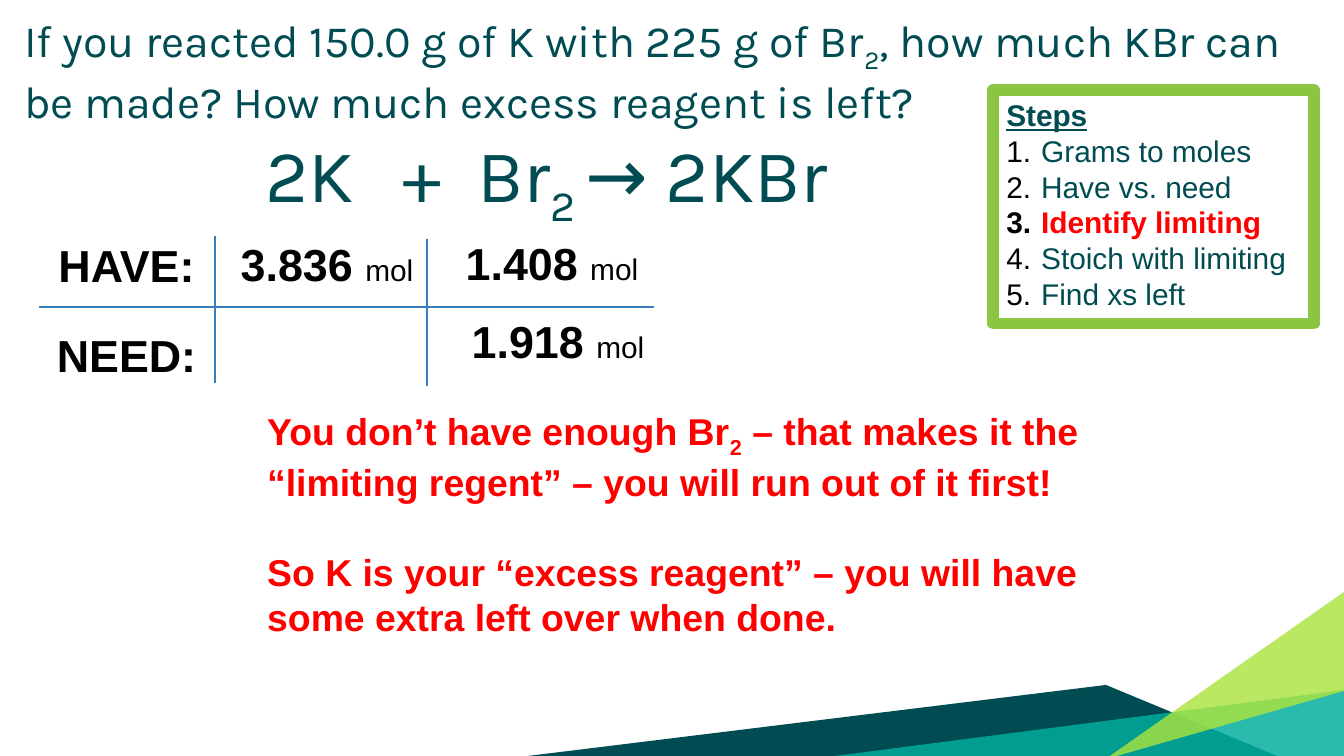
from dataclasses import dataclass

from pptx import Presentation
from pptx.dml.color import RGBColor
from pptx.enum.shapes import MSO_CONNECTOR, MSO_SHAPE
from pptx.enum.text import MSO_ANCHOR, MSO_AUTO_SIZE, PP_ALIGN
from pptx.oxml.ns import qn
from pptx.util import Pt
from lxml import etree

LEFT, CENTER = PP_ALIGN.LEFT, PP_ALIGN.CENTER
TOP, MIDDLE = MSO_ANCHOR.TOP, MSO_ANCHOR.MIDDLE
STRAIGHT, RECTANGLE = MSO_CONNECTOR.STRAIGHT, MSO_SHAPE.RECTANGLE
NO_AUTOFIT = MSO_AUTO_SIZE.NONE

DARK_TEAL = RGBColor(0x00, 0x4C, 0x52)
TEAL = RGBColor(0x00, 0xAE, 0x9D)
LIME = RGBColor(0xAB, 0xE3, 0x3F)
GREEN = RGBColor(0x8B, 0xC6, 0x42)
BLUE = RGBColor(0x36, 0x7E, 0xB9)
RED = RGBColor(0xFF, 0x00, 0x00)
BLACK = RGBColor(0x00, 0x00, 0x00)
WHITE = RGBColor(0xFF, 0xFF, 0xFF)

SLIDE_WIDTH, SLIDE_HEIGHT = 1344, 756
EMU_PER_PX = 9144000 / SLIDE_WIDTH


@dataclass
class Span:
    text: str
    size: int
    color: RGBColor = BLACK
    bold: bool = False
    font: str = "Arial"
    underline: bool = False
    subscript: bool = False


@dataclass
class Label:
    box: tuple[int, int, int, int]
    spans: list[Span]


@dataclass
class Facet:
    points: list[tuple[int, int]]
    color: RGBColor
    opacity: int


def px(length: int) -> int:
    return round(length * EMU_PER_PX)


def add_spans(para, spans: list[Span]) -> None:
    for item in spans:
        span = para.add_run()
        span.text = item.text
        font = span.font
        font.name, font.size = item.font, Pt(item.size)
        font.bold, font.underline = item.bold, item.underline
        font.color.rgb = item.color
        if item.subscript:
            span._r.get_or_add_rPr().set("baseline", "-25000")


def set_tabs(para, stops: list[int]) -> None:
    tabs = etree.SubElement(para._p.get_or_add_pPr(), qn("a:tabLst"))
    for stop in stops:
        etree.SubElement(tabs, qn("a:tab"), pos=str(px(stop)), algn="l")


def set_number(para, indent: int) -> None:
    props = para._p.get_or_add_pPr()
    props.set("marL", str(px(indent)))
    props.set("indent", str(-px(indent)))
    color = etree.SubElement(props, qn("a:buClr"))
    etree.SubElement(color, qn("a:srgbClr"), val=str(BLACK))
    etree.SubElement(props, qn("a:buFont"), typeface="Arial")
    etree.SubElement(props, qn("a:buAutoNum"), type="arabicPeriod")


def add_text_box(page, box: tuple[int, int, int, int], anchor):
    frame = page.shapes.add_textbox(*map(px, box)).text_frame
    frame.word_wrap = True
    frame.vertical_anchor = anchor
    return frame


def add_label(page, label: Label) -> None:
    para = add_text_box(page, label.box, MIDDLE).paragraphs[0]
    para.alignment = CENTER
    add_spans(para, label.spans)


def add_facet(page, facet: Facet) -> None:
    builder = page.shapes.build_freeform(*facet.points[0], scale=EMU_PER_PX)
    builder.add_line_segments(facet.points[1:], close=True)
    shape = builder.convert_to_shape()
    shape.shadow.inherit = False
    shape.fill.solid()
    shape.fill.fore_color.rgb = facet.color
    shape.line.fill.background()
    if facet.opacity < 100:
        color = shape._element.spPr.find(qn("a:solidFill"))[0]
        etree.SubElement(color, qn("a:alpha"), val=str(facet.opacity * 1000))


def add_rule(page, start: tuple[int, int], end: tuple[int, int]) -> None:
    rule = page.shapes.add_connector(STRAIGHT, *map(px, start + end))
    rule.line.color.rgb = BLUE
    rule.line.width = Pt(0.75)
    etree.SubElement(rule._element.spPr, qn("a:effectLst"))


def amount(value: str) -> list[Span]:
    return [Span(value + " ", 24, bold=True), Span("mol", 16)]


def karla(text: str, size: int, subscript: bool = False) -> Span:
    return Span(text, size, DARK_TEAL, font="Karla", subscript=subscript)


def red(text: str, subscript: bool = False) -> Span:
    return Span(text, 20, RED, bold=True, subscript=subscript)


FACETS = [
    Facet([(528, 756), (1277, 756), (1106, 685)], DARK_TEAL, 100),
    Facet([(1344, 690), (1344, 756), (835, 756)], TEAL, 83),
    Facet([(1344, 691), (1344, 592), (1110, 756), (1117, 756)], LIME, 81),
]
LABELS = [
    Label((226, 233, 202, 62), amount("3.836")),
    Label((452, 230, 200, 65), amount("1.408")),
    Label((39, 234, 175, 62), [Span("HAVE:", 24, bold=True)]),
    Label((39, 324, 175, 62), [Span("NEED:", 24, bold=True)]),
    Label((445, 308, 226, 65), amount("1.918")),
]
RULES = [((39, 307), (654, 307)), ((215, 383), (215, 236)), ((427, 386), (427, 239))]
STEPS = ["Grams to moles", "Have vs. need", "Identify limiting",
         "Stoich with limiting", "Find xs left"]
CURRENT_STEP = "Identify limiting"

deck = Presentation()
deck.slide_width, deck.slide_height = px(SLIDE_WIDTH), px(SLIDE_HEIGHT)
page = deck.slides.add_slide(deck.slide_layouts[5])

# Corner decoration
for facet in FACETS:
    add_facet(page, facet)

# Question and reaction equation
title = page.shapes.title
title.left, title.top, title.width, title.height = map(px, (0, 0, SLIDE_WIDTH, 223))
frame = title.text_frame
frame.word_wrap, frame.auto_size, frame.vertical_anchor = True, NO_AUTOFIT, TOP
frame.margin_left = frame.margin_right = frame.margin_top = frame.margin_bottom = px(13)
question, equation = frame.paragraphs[0], frame.add_paragraph()
question._p.get_or_add_pPr().set("marL", str(px(11)))
set_tabs(equation, [241, 378, 453])
for para in (question, equation):
    para.alignment = LEFT
    para.space_before = Pt(0)
add_spans(question, [
    karla("If you reacted 150.0 g of K with 225 g of Br", 24),
    karla("2", 24, True),
    karla(", how much KBr can be made? How much excess reagent is left?", 24),
])
add_spans(equation, [karla("\t2K\t+\tBr", 40), karla("2 ", 40, True), karla("→ 2KBr", 40)])

# Steps panel
panel = page.shapes.add_shape(RECTANGLE, *map(px, (993, 90, 321, 234)))
panel.shadow.inherit = False
panel.fill.solid()
panel.fill.fore_color.rgb = WHITE
panel.line.color.rgb = GREEN
panel.line.width = Pt(6)
frame = panel.text_frame
frame.word_wrap, frame.vertical_anchor = True, TOP
heading = frame.paragraphs[0]
set_tabs(heading, [239])
heading.alignment = LEFT
add_spans(heading, [Span("Steps\t", 16, DARK_TEAL, bold=True, underline=True)])
for step in STEPS:
    para = frame.add_paragraph()
    set_number(para, 35)
    para.alignment = LEFT
    current = step == CURRENT_STEP
    add_spans(para, [Span(step, 16, RED if current else DARK_TEAL, bold=current)])

# Have and need grid
for label in LABELS:
    add_label(page, label)
for start, end in RULES:
    add_rule(page, start, end)

# Conclusion
frame = add_text_box(page, (254, 402, 848, 239), TOP)
add_spans(frame.paragraphs[0], [
    red("You don’t have enough Br"),
    red("2", True),
    red(" – that makes it the “limiting regent” – you will run out of it first!"),
])
excess = frame.add_paragraph()
excess.space_before = Pt(24)
add_spans(excess, [
    red("So K is your “excess reagent” – you will have some extra left over when done."),
])

deck.save("out.pptx")
